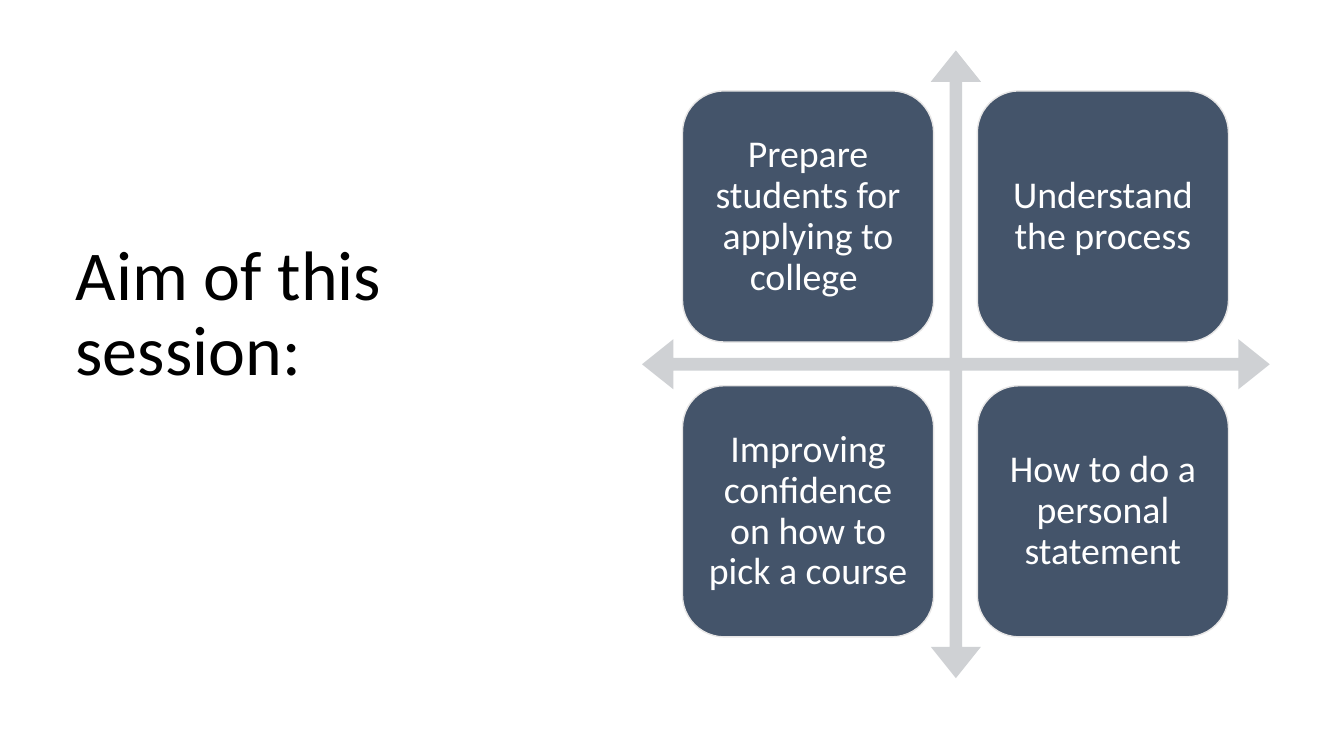
from pptx import Presentation
from pptx.dml.color import RGBColor
from pptx.enum.shapes import MSO_SHAPE as Preset
from pptx.enum.text import MSO_ANCHOR as Anchor, MSO_AUTO_SIZE as AutoSize, PP_ALIGN as Align
from pptx.util import Cm, Pt

BLACK = RGBColor(0x00, 0x00, 0x00)
WHITE = RGBColor(0xFF, 0xFF, 0xFF)
SLATE = RGBColor(0x44, 0x54, 0x6A)
PALE_GREY = RGBColor(0xE7, 0xE6, 0xE6)
ARROW_GREY = RGBColor(0xCF, 0xD1, 0xD4)

TITLE = "Aim of this session:\v"
AIMS = [
    "Prepare students for applying to college ",
    "Understand the process",
    "Improving confidence on how to pick a course",
    "How to do a personal statement",
]
GRID_LEFT, GRID_TOP = 17.2, 2.29
TILE_SIZE, TILE_PITCH = 6.33, 7.43


def write_text(shape, text, size, color, align):
    frame = shape.text_frame
    frame.text = text
    frame.word_wrap = True
    frame.auto_size = AutoSize.NONE
    frame.vertical_anchor = Anchor.MIDDLE
    paragraph = frame.paragraphs[0]
    paragraph.alignment = align
    paragraph.line_spacing = 0.9
    paragraph.font.name = "Calibri"
    paragraph.font.size = Pt(size)
    paragraph.font.color.rgb = color


def place_title(slide):
    title = slide.shapes.title
    title.left, title.top, title.width, title.height = Cm(1.65), Cm(3.35), Cm(10.77), Cm(11.3)
    write_text(title, TITLE, 50, BLACK, Align.LEFT)


def add_cross_arrow(slide):
    arrow = slide.shapes.add_shape(Preset.QUAD_ARROW, Cm(16.18), Cm(1.27), Cm(15.82), Cm(15.82))
    for index, proportion in enumerate((0.02, 0.04, 0.05)):
        arrow.adjustments[index] = proportion
    arrow.shadow.inherit = False
    arrow.fill.solid()
    arrow.fill.fore_color.rgb = ARROW_GREY
    arrow.line.fill.background()


def add_aim_tile(slide, left, top, aim):
    tile = slide.shapes.add_shape(
        Preset.ROUNDED_RECTANGLE, Cm(left), Cm(top), Cm(TILE_SIZE), Cm(TILE_SIZE)
    )
    tile.shadow.inherit = False
    tile.fill.solid()
    tile.fill.fore_color.rgb = SLATE
    tile.line.color.rgb = PALE_GREY
    tile.line.width = Pt(1)
    write_text(tile, aim, 27, WHITE, Align.CENTER)
    frame = tile.text_frame
    frame.margin_left = frame.margin_right = Cm(0.28)
    frame.margin_top = frame.margin_bottom = Cm(0.28)


def main():
    deck = Presentation()
    deck.slide_width, deck.slide_height = Cm(33.87), Cm(19.05)
    slide = deck.slides.add_slide(deck.slide_layouts[5])
    place_title(slide)
    add_cross_arrow(slide)
    for index, aim in enumerate(AIMS):
        row, column = divmod(index, 2)
        add_aim_tile(slide, GRID_LEFT + column * TILE_PITCH, GRID_TOP + row * TILE_PITCH, aim)
    deck.save("out.pptx")


if __name__ == "__main__":
    main()
